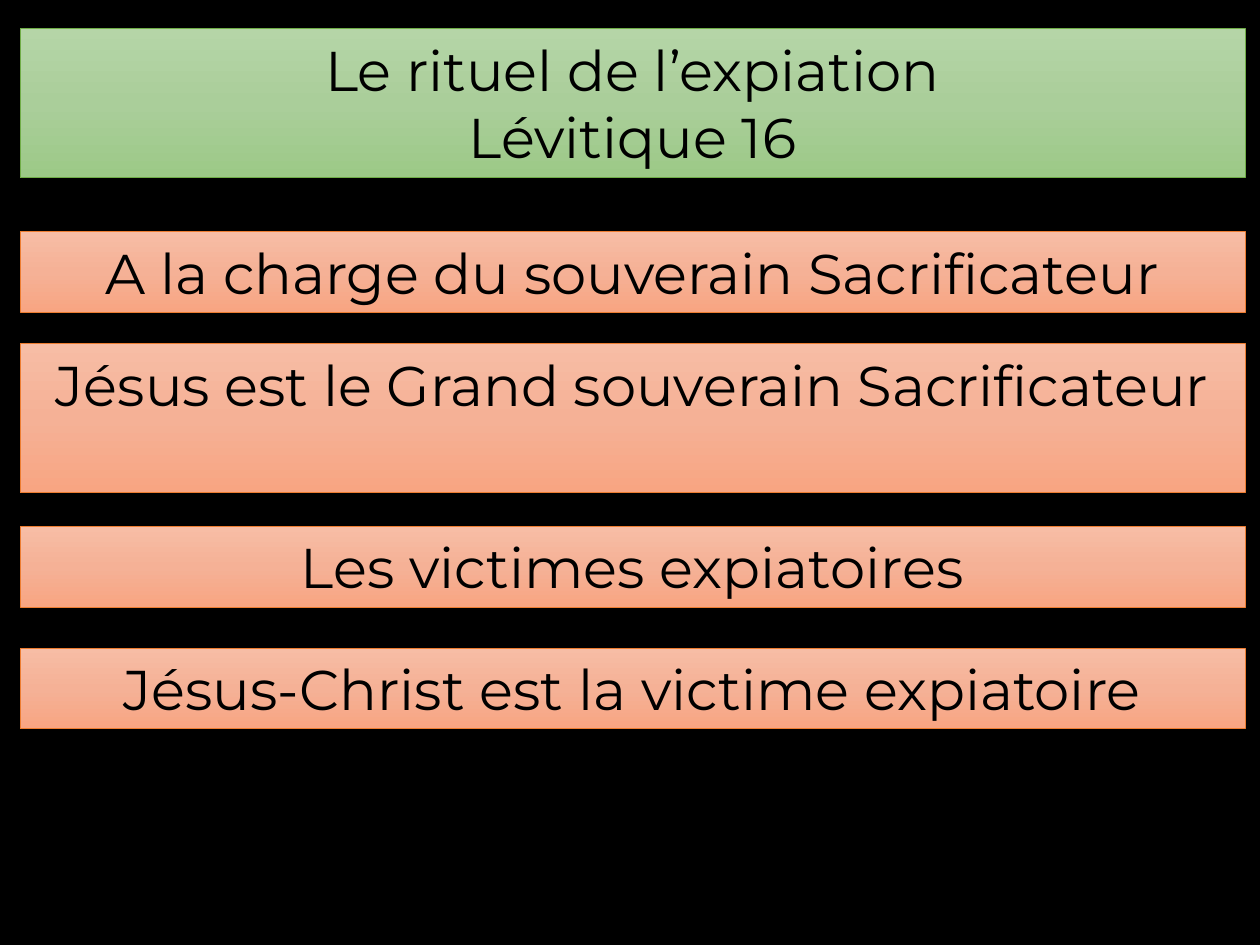
from copy import deepcopy

from pptx import Presentation
from pptx.dml.color import RGBColor
from pptx.enum import text
from pptx.enum.shapes import MSO_SHAPE
from pptx.util import Pt

BLACK = RGBColor(0x00, 0x00, 0x00)
GREEN_LINE = RGBColor(0x70, 0xAD, 0x47)
GREENS = [RGBColor(0xB5, 0xD5, 0xA7), RGBColor(0xAA, 0xCE, 0x9A), RGBColor(0x9C, 0xC9, 0x87)]
ORANGE_LINE = RGBColor(0xED, 0x7D, 0x31)
ORANGES = [RGBColor(0xF7, 0xBD, 0xA5), RGBColor(0xF5, 0xB1, 0x96), RGBColor(0xF8, 0xA5, 0x82)]

LEFT, WIDTH = Pt(11.5), Pt(700)
ONE_LINE, TWO_LINES = 46, 85


def format_banner(shape, wording, top, height, colors, line_color):
    shape.left, shape.top, shape.width, shape.height = LEFT, Pt(top), WIDTH, Pt(height)
    shape.shadow.inherit = False
    shape.line.color.rgb = line_color
    shape.line.width = Pt(0.5)

    shape.fill.gradient()
    shape.fill.gradient_angle = 270
    first_stop = shape.element.spPr.find(".//{*}gs")
    first_stop.addnext(deepcopy(first_stop))
    for stop, position, color in zip(shape.fill.gradient_stops, (0, 0.5, 1), colors):
        stop.position = position
        stop.color.rgb = color

    frame = shape.text_frame
    frame.text = wording
    frame.word_wrap = True
    frame.auto_size = text.MSO_AUTO_SIZE.NONE
    frame.vertical_anchor = text.MSO_ANCHOR.TOP
    for paragraph in frame.paragraphs:
        paragraph.alignment = text.PP_ALIGN.CENTER
        for run in paragraph.runs:
            run.font.name = "Montserrat"
            run.font.size = Pt(32)
            run.font.color.rgb = BLACK


presentation = Presentation()
presentation.slide_width, presentation.slide_height = Pt(720), Pt(540)
slide = presentation.slides.add_slide(presentation.slide_layouts[5])
slide.background.fill.solid()
slide.background.fill.fore_color.rgb = BLACK

format_banner(slide.shapes.title, "Le rituel de l’expiation\nLévitique 16",
              16.5, TWO_LINES, GREENS, GREEN_LINE)

banners = [
    ("A la charge du souverain Sacrificateur", 132.5, ONE_LINE),
    ("Jésus est le Grand souverain Sacrificateur", 196.5, TWO_LINES),
    ("Les victimes expiatoires", 301, ONE_LINE),
    ("Jésus-Christ est la victime expiatoire", 370.5, ONE_LINE),
]
for wording, top, height in banners:
    banner = slide.shapes.add_shape(MSO_SHAPE.RECTANGLE, LEFT, Pt(top), WIDTH, Pt(height))
    format_banner(banner, wording, top, height, ORANGES, ORANGE_LINE)

presentation.save("out.pptx")
